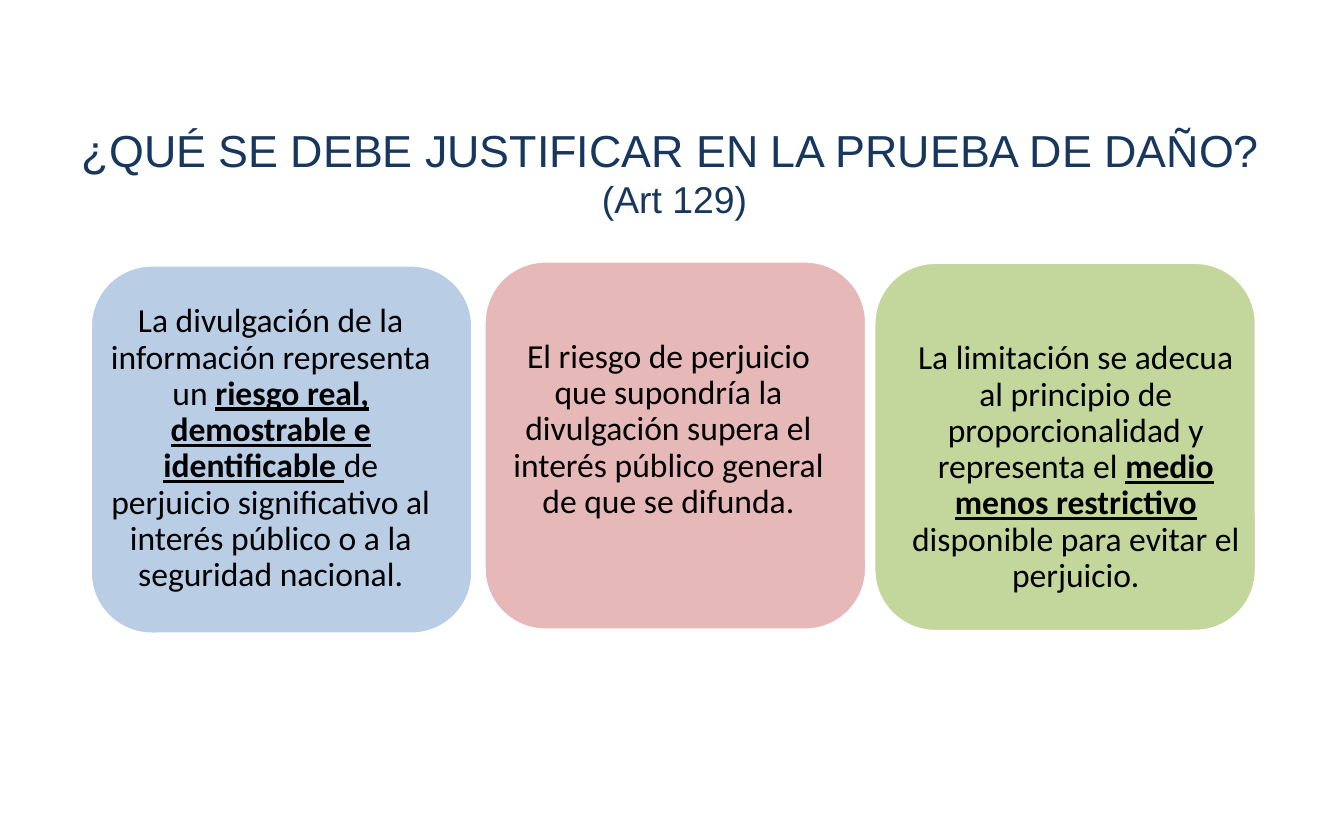
from pptx import Presentation
from pptx.dml.color import RGBColor
from pptx.enum.shapes import MSO_SHAPE
from pptx.enum.text import MSO_ANCHOR, MSO_AUTO_SIZE, PP_ALIGN
from pptx.util import Pt

PX = 9144  # 100 px to the inch
LEFT, CENTER = PP_ALIGN.LEFT, PP_ALIGN.CENTER
TOP, MIDDLE = MSO_ANCHOR.TOP, MSO_ANCHOR.MIDDLE
ROUNDED = MSO_SHAPE.ROUNDED_RECTANGLE
CARD_SIZE = (285, 275)
TEXT_SIZE = (263, 248)


def color(value):
    return RGBColor.from_string(value)


def write(para, text, *, size, font, fill, align, spacing=1.0, strong=False):
    """Append a span to the paragraph; strong means bold and underlined."""
    para.alignment = align
    para.line_spacing = spacing
    span = para.add_run()
    span.text = text
    span.font.size = Pt(size)
    span.font.name = font
    span.font.color.rgb = color(fill)
    span.font.bold = span.font.underline = strong


deck = Presentation()
deck.slide_width, deck.slide_height = 1000 * PX, 625 * PX
page = deck.slides.add_slide(deck.slide_layouts[5])

title = page.shapes.title
title.left, title.top, title.width, title.height = (
    value * PX for value in (51, 86, 902, 84))
title_frame = title.text_frame
title_frame.auto_size = MSO_AUTO_SIZE.NONE
title_frame.vertical_anchor = TOP
title_style = {"font": "Arial", "fill": "17375E"}
write(title_frame.paragraphs[0], "¿QUÉ SE DEBE JUSTIFICAR EN LA PRUEBA DE DAÑO?",
      size=24, align=LEFT, **title_style)
write(title_frame.add_paragraph(), "(Art 129)", size=20, align=CENTER, **title_style)

# Card position, fill, text position, and spans with their emphasis
cards = [
    ((67, 197), "B9CDE5", (70, 210), [
        ("La divulgación de la información representa un ", False),
        ("riesgo real, demostrable e identificable ", True),
        ("de perjuicio significativo al interés público o a la seguridad nacional.", False),
    ]),
    ((360, 194), "E6B9B8", (366, 196), [
        ("El riesgo de perjuicio que supondría la divulgación supera el "
         "interés público general de que se difunda.", False),
    ]),
    ((650, 195), "C3D69B", (669, 224), [
        ("La limitación se adecua al principio de proporcionalidad y representa el ", False),
        ("medio menos restrictivo ", True),
        ("disponible para evitar el perjuicio.", False),
    ]),
]

for card_at, card_fill, text_at, spans in cards:
    card = page.shapes.add_shape(ROUNDED, *(value * PX for value in card_at + CARD_SIZE))
    card.adjustments[0] = 0.167
    card.shadow.inherit = False
    card.fill.solid()
    card.fill.fore_color.rgb = color(card_fill)
    card.line.color.rgb = color("FFFFFF")
    card.line.width = Pt(2)

    box = page.shapes.add_textbox(*(value * PX for value in text_at + TEXT_SIZE))
    frame = box.text_frame
    frame.word_wrap = True
    frame.vertical_anchor = MIDDLE
    frame.margin_left = frame.margin_right = 7 * PX
    frame.margin_top = frame.margin_bottom = 7 * PX
    for text, strong in spans:
        write(frame.paragraphs[0], text, size=18, font="Calibri", fill="000000",
              align=CENTER, spacing=0.9, strong=strong)

deck.save("out.pptx")
